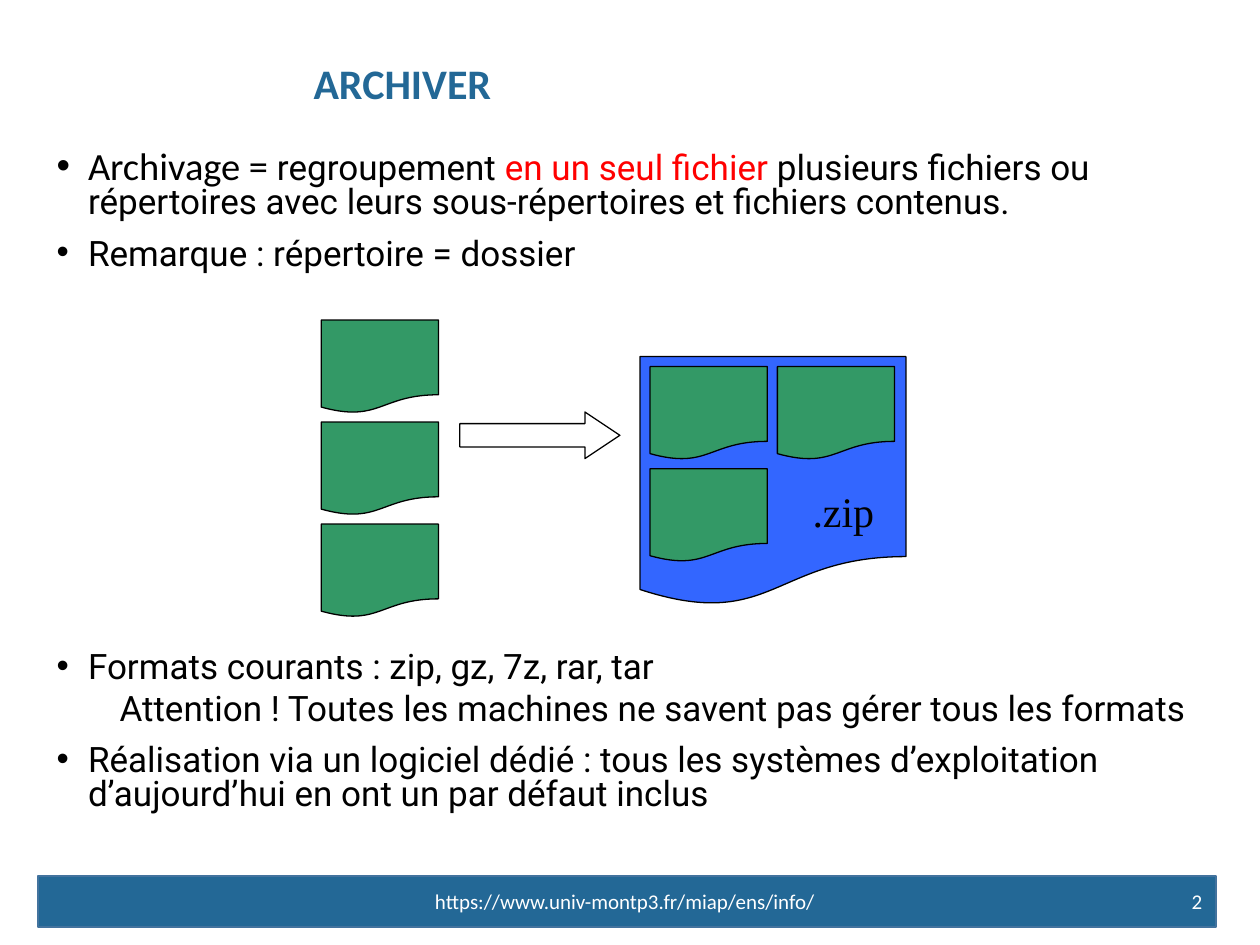
from lxml import etree
from pptx import Presentation
from pptx.dml.color import RGBColor
from pptx.enum.shapes import MSO_SHAPE
from pptx.enum.text import MSO_ANCHOR, PP_ALIGN
from pptx.oxml.ns import qn
from pptx.util import Inches, Pt

DOCUMENT = MSO_SHAPE.FLOWCHART_DOCUMENT
RECTANGLE = MSO_SHAPE.RECTANGLE
RIGHT_ARROW = MSO_SHAPE.RIGHT_ARROW
TOP, MIDDLE = MSO_ANCHOR.TOP, MSO_ANCHOR.MIDDLE
LEFT, CENTER, RIGHT = PP_ALIGN.LEFT, PP_ALIGN.CENTER, PP_ALIGN.RIGHT

BLACK, WHITE, RED = "000000", "FFFFFF", "FF0000"
BLUE, BLUE_EDGE = "236896", "43739E"
FILE_GREEN, ARCHIVE_BLUE = "339966", "3366FF"

FILE_WIDTH, FILE_HEIGHT = 0.93, 0.74
COLUMN_STEP, ROW_STEP = 1.01, 0.81


def color(hex_text):
    return RGBColor.from_string(hex_text)


def format_run(run, size, font_name, hex_text, bold=False):
    run.font.size = Pt(size)
    run.font.name = font_name
    run.font.bold = bold
    run.font.color.rgb = color(hex_text)


def add_box(slide, left, top, width, height, anchor=TOP, wrap=True):
    box = slide.shapes.add_textbox(Inches(left), Inches(top), Inches(width), Inches(height))
    text_frame = box.text_frame
    text_frame.word_wrap = wrap
    text_frame.vertical_anchor = anchor
    return text_frame


def add_label(slide, box, text, size, font_name, hex_text,
              bold=False, align=LEFT, anchor=MIDDLE, wrap=True):
    text_frame = add_box(slide, *box, anchor=anchor, wrap=wrap)
    text_frame.text = text
    paragraph = text_frame.paragraphs[0]
    paragraph.alignment = align
    format_run(paragraph.runs[0], size, font_name, hex_text, bold)


def add_figure(slide, kind, left, top, width, height, fill, line, line_width=0.75):
    shape = slide.shapes.add_shape(kind, Inches(left), Inches(top), Inches(width), Inches(height))
    shape.shadow.inherit = False
    if fill:
        shape.fill.solid()
        shape.fill.fore_color.rgb = color(fill)
    else:
        shape.fill.background()
    shape.line.color.rgb = color(line)
    shape.line.width = Pt(line_width)
    return shape


def set_indent(paragraph, bulleted):
    properties = paragraph._p.get_or_add_pPr()
    properties.set("marL", str(Inches(0.25 if bulleted else 0.5)))
    properties.set("indent", str(Inches(-0.25 if bulleted else 0)))
    if bulleted:
        font = etree.SubElement(properties, qn("a:buFont"))
        font.set("typeface", "Arial")
        bullet = etree.SubElement(properties, qn("a:buChar"))
        bullet.set("char", "•")
    else:
        etree.SubElement(properties, qn("a:buNone"))


def add_bullets(slide, box, items):
    text_frame = add_box(slide, *box)
    for index, (bulleted, runs) in enumerate(items):
        paragraph = text_frame.add_paragraph() if index else text_frame.paragraphs[0]
        set_indent(paragraph, bulleted)
        paragraph.line_spacing = 0.8
        if index:
            paragraph.space_before = Pt(10 if bulleted else 5)
        for text, size, font_name, hex_text in runs:
            run = paragraph.add_run()
            run.text = text
            format_run(run, size, font_name, hex_text)


def body_run(text, hex_text=BLACK):
    return text, 20, "Roboto", hex_text


def add_file(slide, left, top):
    add_figure(slide, DOCUMENT, left, top, FILE_WIDTH, FILE_HEIGHT, FILE_GREEN, BLACK)


def add_archive(slide, left, top, width, height):
    add_figure(slide, DOCUMENT, left, top, width, height, ARCHIVE_BLUE, BLACK)
    for column, row in ((0, 0), (1, 0), (0, 1)):
        add_file(slide, left + 0.08 + column * COLUMN_STEP, top + 0.08 + row * ROW_STEP)
    add_label(slide, (left + 1.27, top + 0.97, 0.75, 0.45), ".zip", 24,
              "Times New Roman", BLACK, anchor=TOP, wrap=False)


def add_diagram(slide, left, top):
    for row in range(3):
        add_file(slide, left, top + row * ROW_STEP)
    arrow = add_figure(slide, RIGHT_ARROW, left + 1.1, top + 0.73, 1.27, 0.37, None, BLACK)
    arrow.adjustments[0] = 0.5
    arrow.adjustments[1] = 0.75
    add_archive(slide, left + 2.53, top + 0.29, 2.11, 1.98)


def add_footer(slide, left, top, width, height):
    add_figure(slide, RECTANGLE, left, top, width, height, BLUE, BLUE_EDGE, 1)
    add_label(slide, (left + 2.93, top, 3.46, 0.4), "https://www.univ-montp3.fr/miap/ens/info/",
              12, "Calibri", WHITE, align=CENTER)
    add_label(slide, (left + width - 2.26, top, 2.25, 0.4), "2", 12, "Calibri", WHITE, align=RIGHT)


def main():
    presentation = Presentation()
    presentation.slide_width = Inches(10)
    presentation.slide_height = Inches(7.5)
    slide = presentation.slides.add_slide(presentation.slide_layouts[6])

    add_footer(slide, 0.3, 6.95, 9.35, 0.41)
    add_label(slide, (2.39, 0.19, 7.51, 0.93), "ARCHIVER", 24, "Calibri", BLUE, bold=True)
    add_bullets(slide, (0.35, 1.15, 9.29, 1.2), [
        (True, [
            ("Archivage = ", 22, "Calibri", BLACK),
            body_run("regroupement "),
            body_run("en un seul fichier", RED),
            body_run(" plusieurs fichiers ou répertoires avec leurs sous-répertoires "
                     "et fichiers contenus."),
        ]),
        (True, [body_run("Remarque : répertoire = dossier")]),
    ])
    add_diagram(slide, 2.55, 2.54)
    add_bullets(slide, (0.35, 5.13, 9.29, 1.6), [
        (True, [body_run("Formats courants : zip, gz, 7z, rar, tar")]),
        (False, [body_run("Attention ! Toutes les machines ne savent pas gérer tous les formats")]),
        (True, [body_run("Réalisation via un logiciel dédié : tous les systèmes d’exploitation "
                         "d’aujourd’hui en ont un par défaut inclus")]),
    ])
    presentation.save("out.pptx")


if __name__ == "__main__":
    main()
